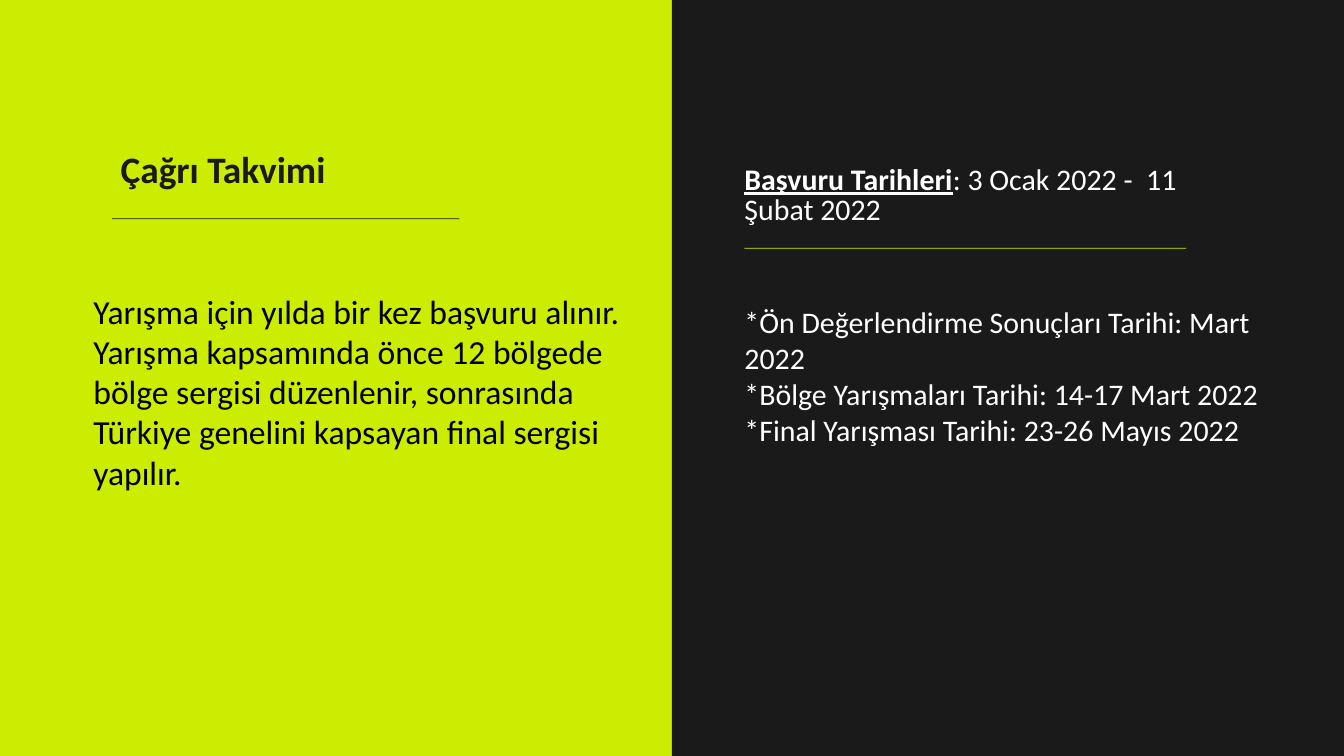
"""Build a two-panel slide with the call calendar of a competition."""
from pptx import Presentation
from pptx.dml.color import RGBColor
from pptx.enum.shapes import MSO_SHAPE
from pptx.enum.text import MSO_AUTO_SIZE
from pptx.util import Cm, Pt

RECTANGLE = MSO_SHAPE.RECTANGLE
GROW = MSO_AUTO_SIZE.SHAPE_TO_FIT_TEXT

COLOURS = {"lime": "CCED00", "dark": "1B1A1A", "white": "FFFFFF", "black": "000000"}
FONT = "Calibri"
WIDTH, HEIGHT = 50.8, 28.58
HALF = WIDTH / 2
LEFT, RIGHT = 4.24, 28.14
LEFT_WIDTH, RIGHT_WIDTH = 13.13, 16.69
RULE = 0.03

BARS = [
    ((HALF, 0, HALF, HEIGHT), "dark"),
    ((LEFT, 8.26, LEFT_WIDTH, RULE), "dark"),
    ((RIGHT, 9.37, RIGHT_WIDTH, RULE), "lime"),
]

TEXTS = [
    {"at": (LEFT, 6.05, LEFT_WIDTH, 1.27), "insets": (0.32, 0, 0, 0),
     "size": 40, "colour": "dark", "spacing": Pt(33),
     "paras": [[("Çağrı Takvimi", True, False)]]},
    {"at": (RIGHT, 10.54, 21.34, 8.76), "insets": (0, 0.95, 0, 0),
     "size": 32, "colour": "white", "spacing": None,
     "paras": [[("*Ön Değerlendirme Sonuçları Tarihi: Mart 2022", False, False)],
               [("*Bölge Yarışmaları Tarihi: 14-17 Mart 2022", False, False)],
               [("*Final Yarışması Tarihi: 23-26 Mayıs 2022", False, False)]]},
    {"at": (RIGHT, 6.25, RIGHT_WIDTH, 3.53), "insets": (0, 0, 0, 0),
     "size": 32, "colour": "white", "spacing": Pt(33),
     "paras": [[("Başvuru Tarihleri", True, True),
                (": 3 Ocak 2022 -  11 Şubat 2022", False, False)]]},
    {"at": (3.28, 10.85, 20.96, 7.95), "insets": (0.25, 0.13, 0.25, 0.13),
     "size": 36, "colour": "black", "spacing": None,
     "paras": [[("Yarışma için yılda bir kez başvuru alınır. Yarışma kapsamında "
                 "önce 12 bölgede bölge sergisi düzenlenir, sonrasında Türkiye "
                 "genelini kapsayan final sergisi yapılır.", False, False)]]},
]


def colour(name):
    return RGBColor.from_string(COLOURS[name])


def add_bar(page, place, fill):
    bar = page.shapes.add_shape(RECTANGLE, *map(Cm, place))
    bar.shadow.inherit = False
    bar.fill.solid()
    bar.fill.fore_color.rgb = colour(fill)
    bar.line.fill.background()


def add_text(page, item):
    frame = page.shapes.add_textbox(*map(Cm, item["at"])).text_frame
    frame.word_wrap = True
    frame.auto_size = GROW
    (frame.margin_left, frame.margin_top,
     frame.margin_right, frame.margin_bottom) = map(Cm, item["insets"])
    for index, runs in enumerate(item["paras"]):
        para = frame.add_paragraph() if index else frame.paragraphs[0]
        para.line_spacing = item["spacing"]
        for words, bold, underline in runs:
            span = para.add_run()
            span.text = words
            span.font.name = FONT
            span.font.size = Pt(item["size"])
            span.font.bold = bold
            span.font.underline = underline
            span.font.color.rgb = colour(item["colour"])


def main():
    deck = Presentation()
    deck.slide_width, deck.slide_height = Cm(WIDTH), Cm(HEIGHT)
    page = deck.slides.add_slide(deck.slide_layouts[6])
    page.background.fill.solid()
    page.background.fill.fore_color.rgb = colour("lime")
    for place, fill in BARS:
        add_bar(page, place, fill)
    for item in TEXTS:
        add_text(page, item)
    deck.save("out.pptx")


if __name__ == "__main__":
    main()
